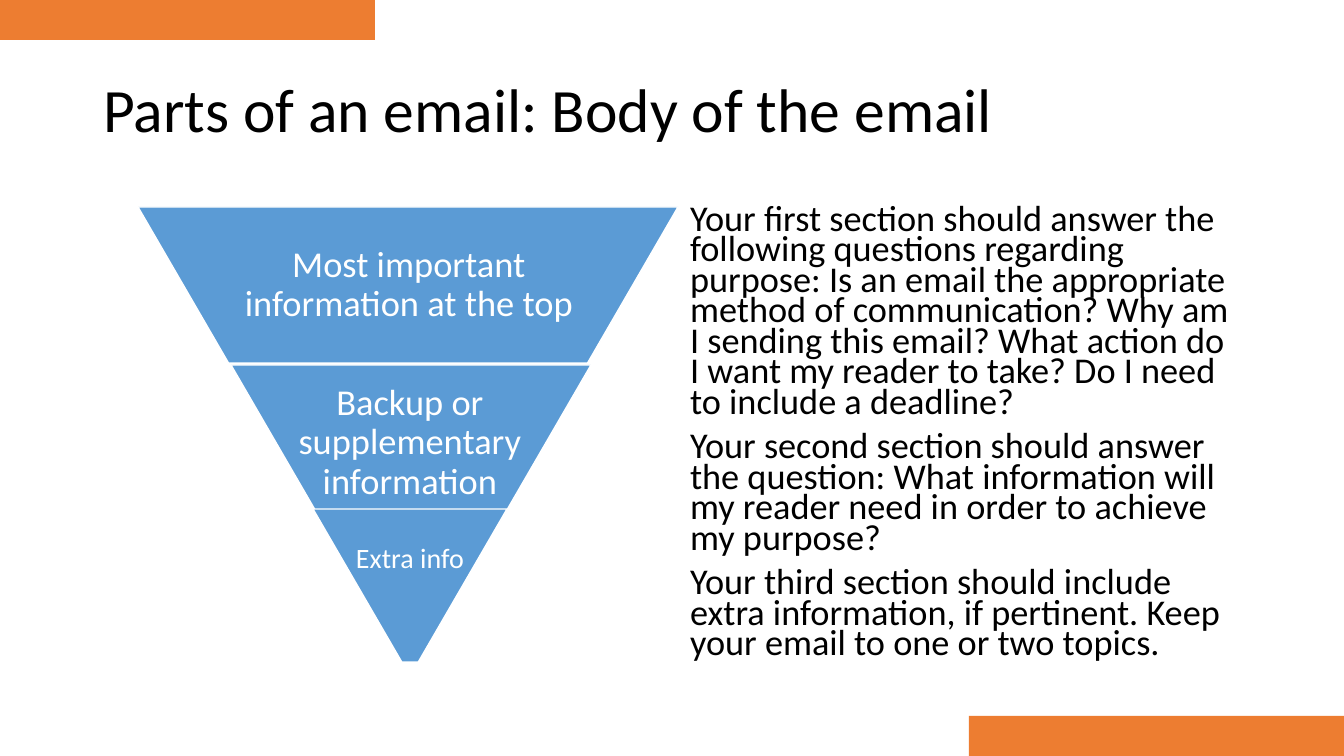
"""Build the slide about the body of an email."""
from pptx import Presentation
from pptx.dml.color import RGBColor
from pptx.enum.shapes import MSO_SHAPE
from pptx.enum.text import MSO_ANCHOR, MSO_AUTO_SIZE, PP_ALIGN
from pptx.oxml.ns import qn
from pptx.util import Emu, Pt

PAGE_SIZE = (1344, 756)
SCALE = 12192000 / PAGE_SIZE[0]
COLOURS = {"text": "000000", "white": "FFFFFF", "band": "5B9BD5", "bar": "ED7D31"}
FONT = "Calibri"
TITLE = "Parts of an email: Body of the email"
SECTIONS = [
    "Your first section should answer the following questions regarding purpose: "
    "Is an email the appropriate method of communication? Why am I sending this email? "
    "What action do I want my reader to take? Do I need to include a deadline?",
    "Your second section should answer the question: What information will my reader "
    "need in order to achieve my purpose?",
    "Your third section should include extra information, if pertinent. "
    "Keep your email to one or two topics.",
]
BANDS = [
    ((138, 207, 540, 156), (233, 207, 352, 156), "Most important information at the top", 26),
    ((231, 365, 360, 156), (293, 365, 234, 156), "Backup or supplementary information", 26),
    ((313, 509, 194, 153), (313, 509, 194, 100), "Extra info", 20),
]
BARS = [(0, 0, 375, 40), (969, 716, 375, 40)]


def emu(*lengths):
    return [Emu(round(length * SCALE)) for length in lengths]


def colour(name):
    return RGBColor.from_string(COLOURS[name])


def write(box, texts, size, ink="text", align=PP_ALIGN.LEFT, anchor=MSO_ANCHOR.MIDDLE,
          leading=0.9, before=0, inset=None):
    frame = box.text_frame
    frame.word_wrap = True
    frame.auto_size = MSO_AUTO_SIZE.NONE
    frame.vertical_anchor = anchor
    if inset is not None:
        frame.margin_left, frame.margin_top, frame.margin_right, frame.margin_bottom = emu(*[inset] * 4)
    for index, text in enumerate(texts):
        para = frame.add_paragraph() if index else frame.paragraphs[0]
        para.alignment = align
        para.line_spacing = leading
        para.space_before = Pt(before)
        span = para.add_run()
        span.text = text
        span.font.name = FONT
        span.font.size = Pt(size)
        span.font.color.rgb = colour(ink)


def place(box, bounds):
    box.left, box.top, box.width, box.height = emu(*bounds)


def remove_bullets(box):
    for para in box.text_frame.paragraphs:
        properties = para._p.get_or_add_pPr()
        properties.set("marL", "0")
        properties.set("indent", "0")
        properties.append(properties.makeelement(qn("a:buNone"), {}))


def add_plain_shape(page, kind, bounds, fill, line=None):
    shape = page.shapes.add_shape(kind, *emu(*bounds))
    shape.shadow.inherit = False
    shape.fill.solid()
    shape.fill.fore_color.rgb = colour(fill)
    if line:
        shape.line.color.rgb = colour(line)
        shape.line.width = Pt(1)
    else:
        shape.line.fill.background()
    return shape


def add_band(page, bounds, text_bounds, text, size):
    band = add_plain_shape(page, MSO_SHAPE.TRAPEZOID, bounds, "band", line="white")
    band.rotation = 180
    band.adjustments[0] = 0.58
    label = page.shapes.add_textbox(*emu(*text_bounds))
    write(label, [text], size, ink="white", align=PP_ALIGN.CENTER, inset=4)


def main():
    deck = Presentation()
    deck.slide_width, deck.slide_height = emu(*PAGE_SIZE)
    page = deck.slides.add_slide(deck.slide_layouts[1])
    title, body = page.placeholders
    place(title, (93, 40, 1159, 146))
    write(title, [TITLE], 44)
    place(body, (680, 202, 572, 480))
    write(body, SECTIONS, 25.9, anchor=MSO_ANCHOR.TOP, leading=0.7, before=10)
    remove_bullets(body)
    for band in BANDS:
        add_band(page, *band)
    for bounds in BARS:
        add_plain_shape(page, MSO_SHAPE.RECTANGLE, bounds, "bar")
    deck.save("out.pptx")


if __name__ == "__main__":
    main()
